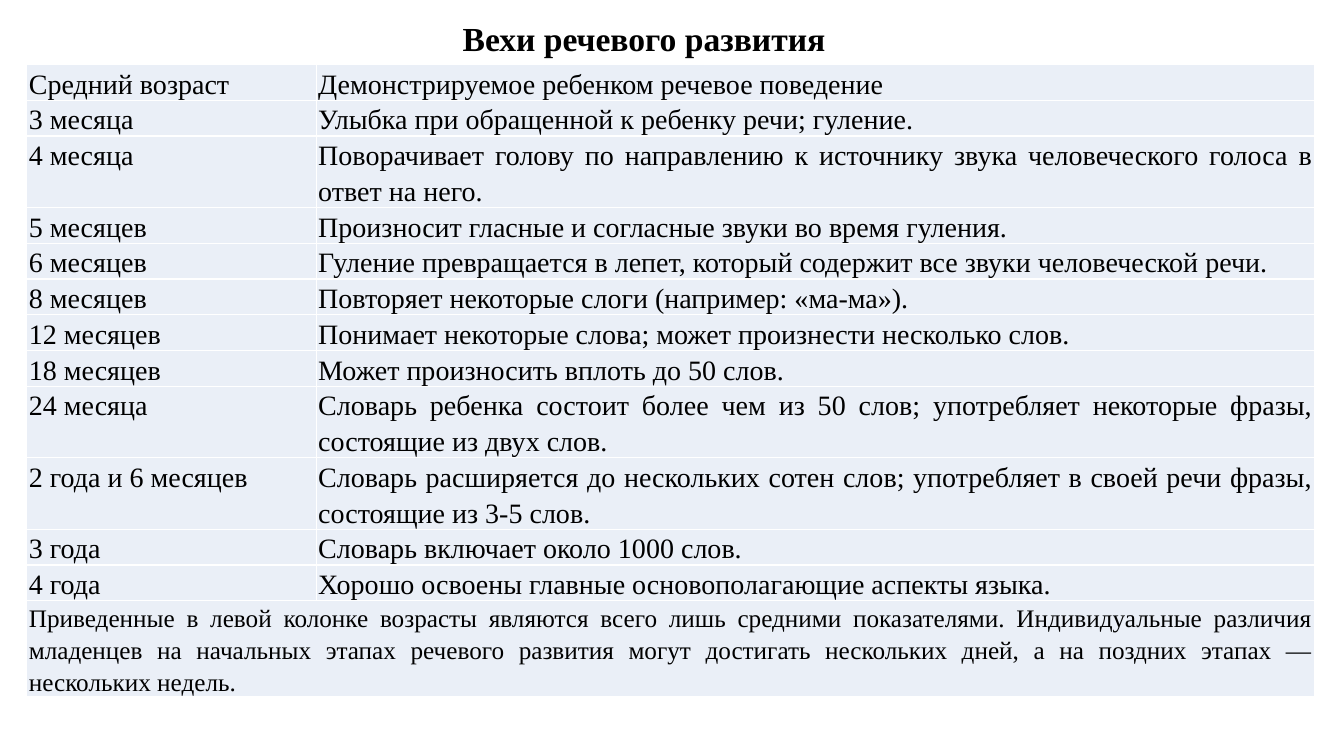
"""Build a slide with a table of speech development milestones."""
from dataclasses import dataclass

from lxml.etree import SubElement
from pptx import Presentation
from pptx.dml.color import RGBColor
from pptx.enum.text import MSO_ANCHOR, MSO_AUTO_SIZE, PP_ALIGN
from pptx.oxml.ns import qn
from pptx.util import Inches, Pt

FONT = "Times New Roman"
BLACK = RGBColor(0x00, 0x00, 0x00)
WHITE = RGBColor(0xFF, 0xFF, 0xFF)
PALE_BLUE = RGBColor(0xEA, 0xEF, 0xF7)
SLIDE_W, SLIDE_H = Inches(13.33), Inches(7.5)
COLUMNS = (Inches(2.87), Inches(9.9))
LINE_H, NOTE_LINE_H = Inches(0.35), Inches(0.31)
TEXT_SIZE, NOTE_SIZE, TITLE_SIZE = 20, 18, 24


@dataclass(frozen=True)
class Milestone:
    age: str
    behaviour: str
    lines: int = 1
    anchor: MSO_ANCHOR = MSO_ANCHOR.TOP


MILESTONES = (
    Milestone("Средний возраст", "Демонстрируемое ребенком речевое поведение"),
    Milestone("3 месяца", "Улыбка при обращенной к ребенку речи; гуление."),
    Milestone("4 месяца", "Поворачивает голову по направлению к источнику звука "
              "человеческого голоса в ответ на него.", 2, MSO_ANCHOR.MIDDLE),
    Milestone("5 месяцев", "Произносит гласные и согласные звуки во время гуления."),
    Milestone("6 месяцев", "Гуление превращается в лепет, который содержит все звуки "
              "человеческой речи."),
    Milestone("8 месяцев", "Повторяет некоторые слоги (например: «ма-ма»)."),
    Milestone("12 месяцев", "Понимает некоторые слова; может произнести несколько слов."),
    Milestone("18 месяцев", "Может произносить вплоть до 50 слов."),
    Milestone("24 месяца", "Словарь ребенка состоит более чем из 50 слов; употребляет "
              "некоторые фразы, состоящие из двух слов.", 2),
    Milestone("2 года и 6 месяцев", "Словарь расширяется до нескольких сотен слов; "
              "употребляет в своей речи фразы, состоящие из 3-5 слов.", 2),
    Milestone("3 года", "Словарь включает около 1000 слов."),
    Milestone("4 года", "Хорошо освоены главные основополагающие аспекты языка."),
)
NOTE = ("Приведенные в левой колонке возрасты являются всего лишь средними показателями. "
        "Индивидуальные различия младенцев на начальных этапах речевого развития могут "
        "достигать нескольких дней, а на поздних этапах — нескольких недель.")


def style_paragraph(p, size: int, bold: bool = False) -> None:
    """Set the typeface, size, weight and colour of a paragraph."""
    p.font.name = FONT
    p.font.size = Pt(size)
    p.font.bold = bold
    p.font.color.rgb = BLACK


def style_cell(cell) -> None:
    """Give a cell its margins, white borders and pale fill."""
    cell.margin_left = cell.margin_right = Inches(0.02)
    cell.margin_top = cell.margin_bottom = 0
    tc_pr = cell._tc.get_or_add_tcPr()
    for side in ("a:lnL", "a:lnR", "a:lnT", "a:lnB"):
        ln = SubElement(tc_pr, qn(side), w=str(Pt(1)))
        SubElement(SubElement(ln, qn("a:solidFill")), qn("a:srgbClr"), val=str(WHITE))
    cell.fill.solid()
    cell.fill.fore_color.rgb = PALE_BLUE


def write_cell(cell, text: str, size: int = TEXT_SIZE,
               anchor: MSO_ANCHOR = MSO_ANCHOR.TOP) -> None:
    """Write justified text in a cell."""
    cell.text = text
    cell.vertical_anchor = anchor
    p = cell.text_frame.paragraphs[0]
    p.alignment = PP_ALIGN.JUSTIFY
    p.line_spacing = 1.15
    style_paragraph(p, size)


def add_milestones(slide) -> None:
    """Add the milestone table with its closing note."""
    heights = [m.lines * LINE_H for m in MILESTONES] + [3 * NOTE_LINE_H]
    table = slide.shapes.add_table(
        len(heights), len(COLUMNS), int(SLIDE_W * 0.02), Inches(0.64),
        sum(COLUMNS), sum(heights)).table
    table.first_row = table.horz_banding = False
    for column, width in zip(table.columns, COLUMNS):
        column.width = width
    for row, height in zip(table.rows, heights):
        row.height = height
    for cell in table.iter_cells():
        style_cell(cell)
    for i, m in enumerate(MILESTONES):
        write_cell(table.cell(i, 0), m.age)
        write_cell(table.cell(i, 1), m.behaviour, anchor=m.anchor)
    last = len(MILESTONES)
    table.cell(last, 0).merge(table.cell(last, 1))
    write_cell(table.cell(last, 0), NOTE, NOTE_SIZE)


def add_title(slide) -> None:
    """Add the slide heading above the table."""
    sp = slide.shapes.add_textbox(Inches(4.49), Inches(0.13), Inches(3.84), Inches(0.5))
    tf = sp.text_frame
    tf.word_wrap = False
    tf.auto_size = MSO_AUTO_SIZE.SHAPE_TO_FIT_TEXT
    tf.text = "Вехи речевого развития"
    style_paragraph(tf.paragraphs[0], TITLE_SIZE, bold=True)


def main() -> None:
    """Create and save the presentation."""
    prs = Presentation()
    prs.slide_width, prs.slide_height = SLIDE_W, SLIDE_H
    slide = prs.slides.add_slide(prs.slide_layouts[6])
    add_milestones(slide)
    add_title(slide)
    prs.save("out.pptx")


if __name__ == "__main__":
    main()
